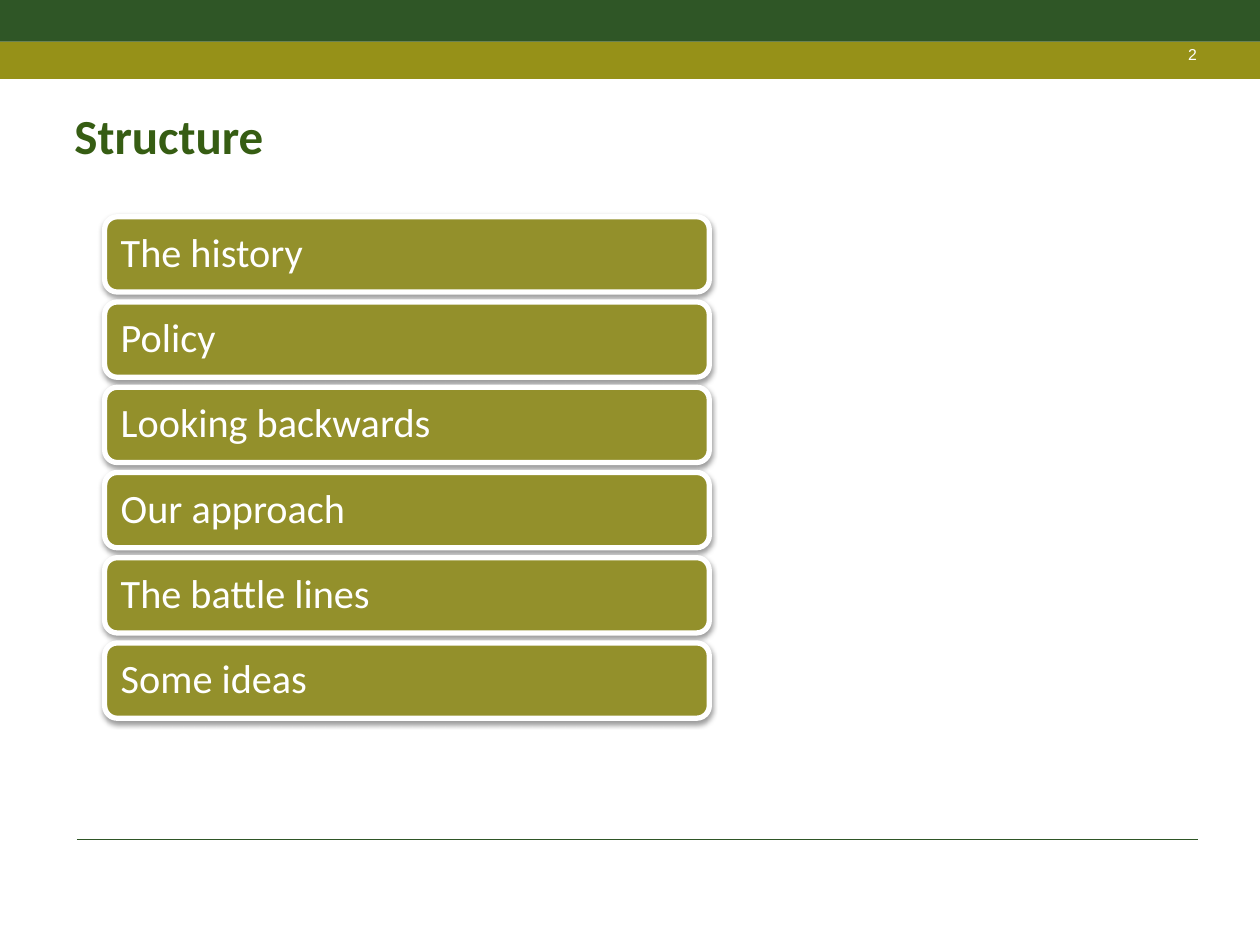
from lxml import etree
from pptx import Presentation
from pptx.dml.color import RGBColor
from pptx.enum import shapes, text
from pptx.oxml import ns
from pptx.util import Cm, Pt

DARK_GREEN = "2F5626"
OLIVE = "969118"
TITLE_GREEN = "365D13"
CARD_OLIVE = "93902B"
WHITE = "FFFFFF"

TOPICS = ["The history", "Policy", "Looking backwards",
          "Our approach", "The battle lines", "Some ideas"]


def colour(value):
    return RGBColor.from_string(value)


def set_frame(frame, anchor, margins):
    """Wrap the text and set its anchor and left, top, right, bottom margins in cm."""
    frame.word_wrap = True
    frame.auto_size = text.MSO_AUTO_SIZE.NONE
    frame.vertical_anchor = anchor
    (frame.margin_left, frame.margin_top,
     frame.margin_right, frame.margin_bottom) = map(Cm, margins)


def write(frame, words, font, size, ink, bold=False, align=text.PP_ALIGN.LEFT):
    para = frame.paragraphs[0]
    para.alignment = align
    span = para.add_run()
    span.text = words
    span.font.name = font
    span.font.size = Pt(size)
    span.font.bold = bold
    span.font.color.rgb = colour(ink)
    return para


def add_soft_shadow(shape):
    shape.shadow.inherit = False
    effects = shape._element.spPr.find(ns.qn("a:effectLst"))
    shadow = etree.SubElement(effects, ns.qn("a:outerShdw"), blurRad="40000",
                              dist="20000", dir="5400000", rotWithShape="0")
    black = etree.SubElement(shadow, ns.qn("a:srgbClr"), val="000000")
    etree.SubElement(black, ns.qn("a:alpha"), val="38000")


def add_band(page, left, top, width, height, fill):
    band = page.shapes.add_shape(shapes.MSO_SHAPE.RECTANGLE,
                                 Cm(left), Cm(top), Cm(width), Cm(height))
    band.shadow.inherit = False
    band.fill.solid()
    band.fill.fore_color.rgb = colour(fill)
    band.line.fill.background()


def add_header(page, left, top, width, height):
    """Two stacked bands with the page number at the right."""
    dark = 0.84
    add_band(page, left, top + dark, width, height - dark, OLIVE)
    add_band(page, left, top, width, dark, DARK_GREEN)
    box = page.shapes.add_textbox(Cm(left + width - 2.39), Cm(top + 0.58),
                                  Cm(1.12), Cm(1.02))
    set_frame(box.text_frame, text.MSO_ANCHOR.MIDDLE, (0, 0, 0, 0))
    write(box.text_frame, "2", "Arial", 9, WHITE, align=text.PP_ALIGN.RIGHT)


def add_footer_rule(page, left, top, width):
    rule = page.shapes.add_connector(shapes.MSO_CONNECTOR.STRAIGHT, Cm(left), Cm(top),
                                     Cm(left + width), Cm(top))
    rule.line.color.rgb = colour(DARK_GREEN)
    rule.line.width = Pt(0.75)
    etree.SubElement(rule._element.spPr, ns.qn("a:effectLst"))


def place_title(page, words, left, top, width, height):
    title = page.shapes.title
    title.left, title.top, title.width, title.height = map(Cm, (left, top, width, height))
    set_frame(title.text_frame, text.MSO_ANCHOR.TOP, (0, 0.13, 0.25, 0.13))
    para = write(title.text_frame, words, "Calibri", 28, TITLE_GREEN, bold=True)
    para.line_spacing = 0.9


def add_topic_list(page, topics, left, top, width, height, gap):
    """Equal rounded cards stacked to fill the given height."""
    group = page.shapes.add_group_shape()
    card_height = (height - gap * (len(topics) - 1)) / len(topics)
    for index, topic in enumerate(topics):
        card = group.shapes.add_shape(
            shapes.MSO_SHAPE.ROUNDED_RECTANGLE, Cm(left),
            Cm(top + index * (card_height + gap)), Cm(width), Cm(card_height))
        card.fill.solid()
        card.fill.fore_color.rgb = colour(CARD_OLIVE)
        card.line.color.rgb = colour(WHITE)
        card.line.width = Pt(3)
        add_soft_shadow(card)
        set_frame(card.text_frame, text.MSO_ANCHOR.MIDDLE, (0.25, 0.25, 0.25, 0.25))
        para = write(card.text_frame, topic, "Calibri", 23, WHITE)
        para.line_spacing = 0.9


def main():
    deck = Presentation()
    deck.slide_width, deck.slide_height = Cm(25.4), Cm(19.05)
    page = deck.slides.add_slide(deck.slide_layouts[5])
    add_header(page, 0, 0, 25.4, 1.59)
    add_footer_rule(page, 1.55, 16.92, 22.6)
    place_title(page, "Structure", 1.5, 2.13, 19.18, 1.98)
    add_topic_list(page, TOPICS, 2.11, 4.37, 12.19, 10.11, 0.2)
    deck.save("out.pptx")


if __name__ == "__main__":
    main()
